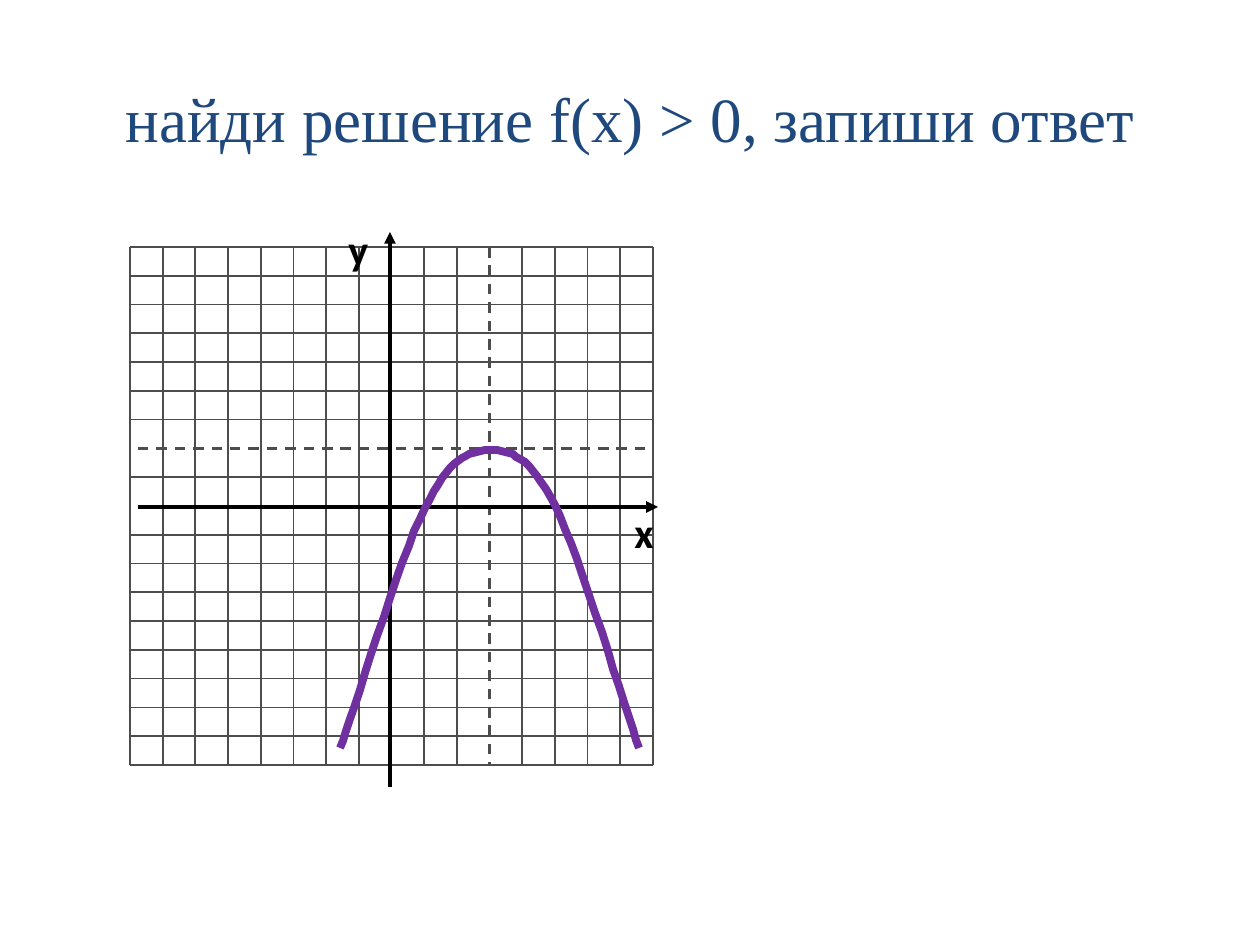
from lxml import etree
from pptx import Presentation
from pptx.dml.color import RGBColor
from pptx.enum.dml import MSO_LINE
from pptx.enum.shapes import MSO_CONNECTOR
from pptx.enum.text import MSO_ANCHOR, PP_ALIGN
from pptx.oxml.ns import qn
from pptx.util import Emu, Pt

STRAIGHT = MSO_CONNECTOR.STRAIGHT
DASH = MSO_LINE.DASH
MIDDLE, TOP = MSO_ANCHOR.MIDDLE, MSO_ANCHOR.TOP
CENTER, LEFT = PP_ALIGN.CENTER, PP_ALIGN.LEFT

PX = 914400 // 126
SLIDE_W, SLIDE_H = 1260, 945

TITLE = "найди решение f(x) > 0, запиши ответ"
TITLE_BOX = (63, 38, 1134, 158)
AXIS_LABELS = [("у", (336, 217, 38, 47)), ("х", (622, 500, 38, 47))]

GRID_LEFT, GRID_TOP, GRID_RIGHT, GRID_BOTTOM = 130, 247, 653, 765
COLUMNS, ROWS = 16, 18
Y_AXIS_COLUMN, X_AXIS_ROW = 8, 9
VERTEX_COLUMN, VERTEX_ROW = 11, 7
X_AXIS = (138, 507, 658, 507)
Y_AXIS = (390, 787, 390, 232)

PARABOLA_START = (340, 748)
PARABOLA_BEZIERS = [
    ((352, 719), (399, 558), (425, 508)),
    ((450, 459), (467, 451), (489, 450)),
    ((510, 450), (530, 456), (555, 505)),
    ((580, 556), (626, 712), (639, 748)),
]
STEPS = 16

GRID_COLOR, AXIS_COLOR = "4D4D4D", "000000"
TITLE_COLOR, PARABOLA_COLOR = "1F497D", "7030A0"


def px(value):
    return Emu(round(value * PX))


def color(hex_string):
    return RGBColor.from_string(hex_string)


def add_line(slide, ends, line_color, width, dashed=False, arrow=False):
    connector = slide.shapes.add_connector(STRAIGHT, *map(px, ends))
    line = connector.line
    line.color.rgb = color(line_color)
    line.width = Pt(width)
    if dashed:
        line.dash_style = DASH
    if arrow:
        etree.SubElement(line._get_or_add_ln(), qn("a:tailEnd"), type="triangle")
    etree.SubElement(connector._element.spPr, qn("a:effectLst"))


def add_text(slide, text, box, font_name, size, text_color,
             bold=False, align=LEFT, anchor=TOP, wrap=False):
    frame = slide.shapes.add_textbox(*map(px, box)).text_frame
    frame.word_wrap = wrap
    frame.vertical_anchor = anchor
    paragraph = frame.paragraphs[0]
    paragraph.text = text
    paragraph.alignment = align
    font = paragraph.font
    font.name, font.size, font.bold = font_name, Pt(size), bold
    font.color.rgb = color(text_color)


def add_grid(slide):
    for column in range(COLUMNS + 1):
        if column != Y_AXIS_COLUMN:
            x = GRID_LEFT + (GRID_RIGHT - GRID_LEFT) * column / COLUMNS
            dashed = column == VERTEX_COLUMN
            add_line(slide, (x, GRID_TOP, x, GRID_BOTTOM), GRID_COLOR,
                     1.5 if dashed else 1, dashed)
    for row in range(ROWS + 1):
        if row != X_AXIS_ROW:
            y = GRID_TOP + (GRID_BOTTOM - GRID_TOP) * row / ROWS
            dashed = row == VERTEX_ROW
            left = X_AXIS[0] if dashed else GRID_LEFT
            add_line(slide, (left, y, GRID_RIGHT, y), GRID_COLOR,
                     1.5 if dashed else 1, dashed)


def bezier_point(points, t):
    weights = ((1 - t) ** 3, 3 * t * (1 - t) ** 2, 3 * t * t * (1 - t), t ** 3)
    return tuple(sum(w * p[axis] for w, p in zip(weights, points))
                 for axis in (0, 1))


def add_parabola(slide):
    start = PARABOLA_START
    points = []
    for controls in PARABOLA_BEZIERS:
        points += [bezier_point((start, *controls), step / STEPS)
                   for step in range(1, STEPS + 1)]
        start = controls[-1]
    builder = slide.shapes.build_freeform(*PARABOLA_START, scale=PX)
    builder.add_line_segments(points, close=False)
    parabola = builder.convert_to_shape()
    parabola.shadow.inherit = False
    parabola.fill.background()
    parabola.line.color.rgb = color(PARABOLA_COLOR)
    parabola.line.width = Pt(4.5)


def main():
    presentation = Presentation()
    presentation.slide_width, presentation.slide_height = px(SLIDE_W), px(SLIDE_H)
    slide = presentation.slides.add_slide(presentation.slide_layouts[6])

    add_text(slide, TITLE, TITLE_BOX, "Times New Roman", 36, TITLE_COLOR,
             align=CENTER, anchor=MIDDLE, wrap=True)
    add_grid(slide)
    for axis in (X_AXIS, Y_AXIS):
        add_line(slide, axis, AXIS_COLOR, 2.25, arrow=True)
    for letter, box in AXIS_LABELS:
        add_text(slide, letter, box, "Calibri", 24, AXIS_COLOR, bold=True)
    add_parabola(slide)

    presentation.save("out.pptx")


if __name__ == "__main__":
    main()
